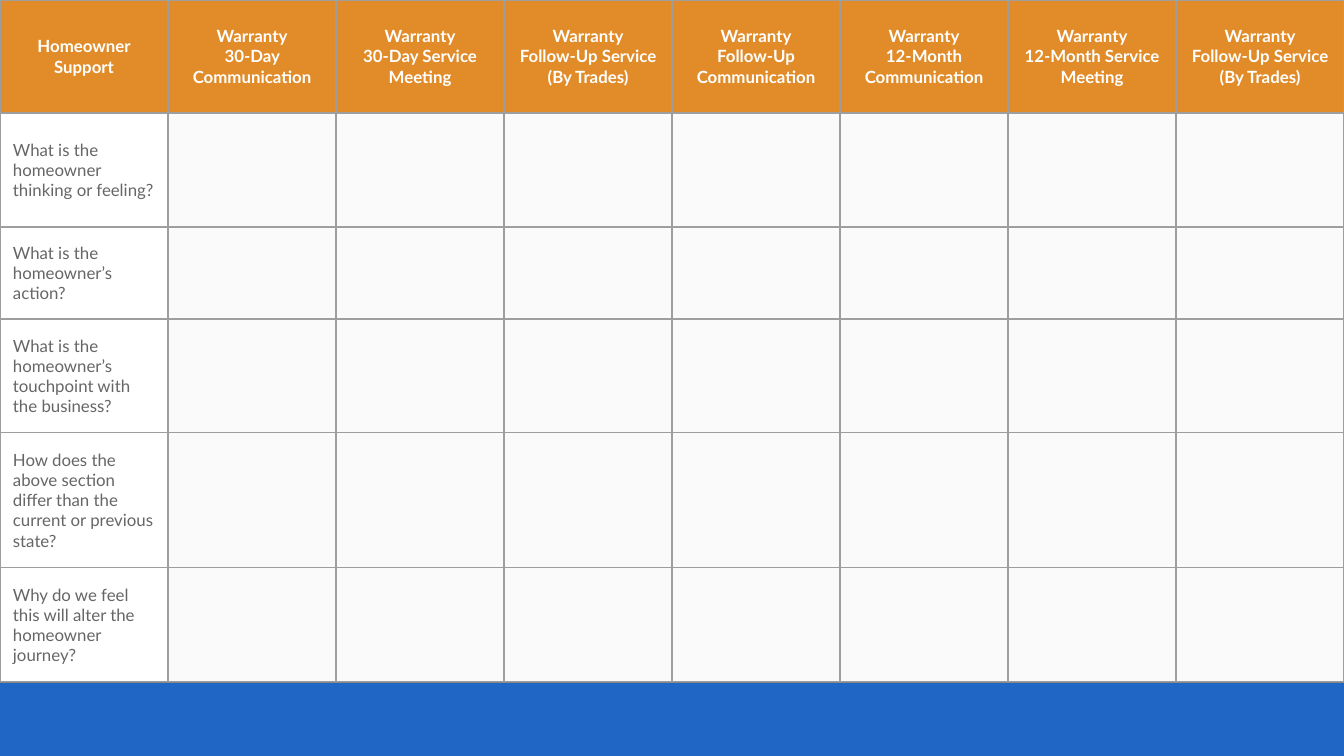
from dataclasses import dataclass

from lxml.etree import SubElement as Sub
from pptx import Presentation
from pptx.dml.color import RGBColor as RGB
from pptx.enum.shapes import MSO_SHAPE as Shape
from pptx.enum.text import MSO_ANCHOR as Anchor, PP_ALIGN as Align
from pptx.oxml.ns import qn
from pptx.util import Emu, Pt

WIDE, HIGH = 1344, 756
COLS = 8
ROWS = [113, 114, 92, 114, 135, 114]

HEADS = [
    ["Homeowner", "Support"],
    ["Warranty", "30-Day Communication"],
    ["Warranty", "30-Day Service Meeting"],
    ["Warranty", "Follow-Up Service", "(By Trades)"],
    ["Warranty", "Follow-Up Communication"],
    ["Warranty", "12-Month Communication"],
    ["Warranty", "12-Month Service Meeting"],
    ["Warranty", "Follow-Up Service", "(By Trades)"],
]
ASKS = [
    "What is the homeowner thinking or feeling?",
    "What is the homeowner’s action?",
    "What is the homeowner’s touchpoint with the business?",
    "How does the above section differ than the current or previous state?",
    "Why do we feel this will alter the homeowner journey?",
]


@dataclass(frozen=True)
class Theme:
    back: str = "2066C5"
    panel: str = "FFFFFF"
    edge: str = "888888"
    grid: str = "9E9E9E"
    head: str = "E18C28"
    blank: str = "FAFAFA"
    light: str = "FFFFFF"
    dark: str = "666666"
    font: str = "Lato"
    size: float = 9
    line: float = 0.75
    pad: int = 13


def px(n):
    """Turn px into EMU, at 134.4 px to the inch."""
    return Emu(round(n * 914400 / 134.4))


def paint(fill, color):
    fill.solid()
    fill.fore_color.rgb = RGB.from_string(color)


class Board:
    def __init__(self, slide, theme):
        self.slide, self.theme = slide, theme
        paint(slide.background.fill, theme.back)

    def panel(self, x, y, w, h):
        look = self.theme
        box = self.slide.shapes.add_shape(Shape.RECTANGLE, px(x), px(y), px(w), px(h))
        box.shadow.inherit = False
        paint(box.fill, look.panel)
        paint(box.line.fill, look.edge)
        box.line.width = Pt(look.line)

    def table(self, x, y, width, rows, cols):
        frame = self.slide.shapes.add_table(
            len(rows), cols, px(x), px(y), px(width), px(sum(rows)))
        table = frame.table
        table.first_row = table.horz_banding = False
        for col in table.columns:
            col.width = px(width // cols)
        for row, high in zip(table.rows, rows):
            row.height = px(high)
        for cell in table.iter_cells():
            self.border(cell)
        return table

    def border(self, cell):
        props = cell._tc.get_or_add_tcPr()
        for side in ("a:lnL", "a:lnR", "a:lnT", "a:lnB"):
            line = Sub(props, qn(side), w=str(Pt(self.theme.line)))
            Sub(Sub(line, qn("a:solidFill")), qn("a:srgbClr"), val=self.theme.grid)

    def label(self, cell, lines, color, bold, align):
        look = self.theme
        pad = px(look.pad)
        form = {"margin_left": pad, "margin_right": pad, "margin_top": pad,
                "margin_bottom": pad, "vertical_anchor": Anchor.MIDDLE}
        for name, value in form.items():
            setattr(cell, name, value)
        cell.text = "\n".join(lines)
        for para in cell.text_frame.paragraphs:
            para.alignment = align
            font = para.runs[0].font
            for name, value in {"name": look.font, "size": Pt(look.size), "bold": bold}.items():
                setattr(font, name, value)
            font.color.rgb = RGB.from_string(color)


def main():
    deck = Presentation()
    deck.slide_width, deck.slide_height = px(WIDE), px(HIGH)
    look = Theme()
    board = Board(deck.slides.add_slide(deck.slide_layouts[6]), look)
    board.panel(0, 0, WIDE, sum(ROWS))
    table = board.table(0, 0, WIDE, ROWS, COLS)

    for col, lines in enumerate(HEADS):
        cell = table.cell(0, col)
        paint(cell.fill, look.head)
        board.label(cell, lines, look.light, True, Align.CENTER)

    for row, ask in enumerate(ASKS, 1):
        cell = table.cell(row, 0)
        cell.fill.background()
        board.label(cell, [ask], look.dark, False, Align.LEFT)
        for col in range(1, COLS):
            paint(table.cell(row, col).fill, look.blank)

    deck.save("out.pptx")


if __name__ == "__main__":
    main()
